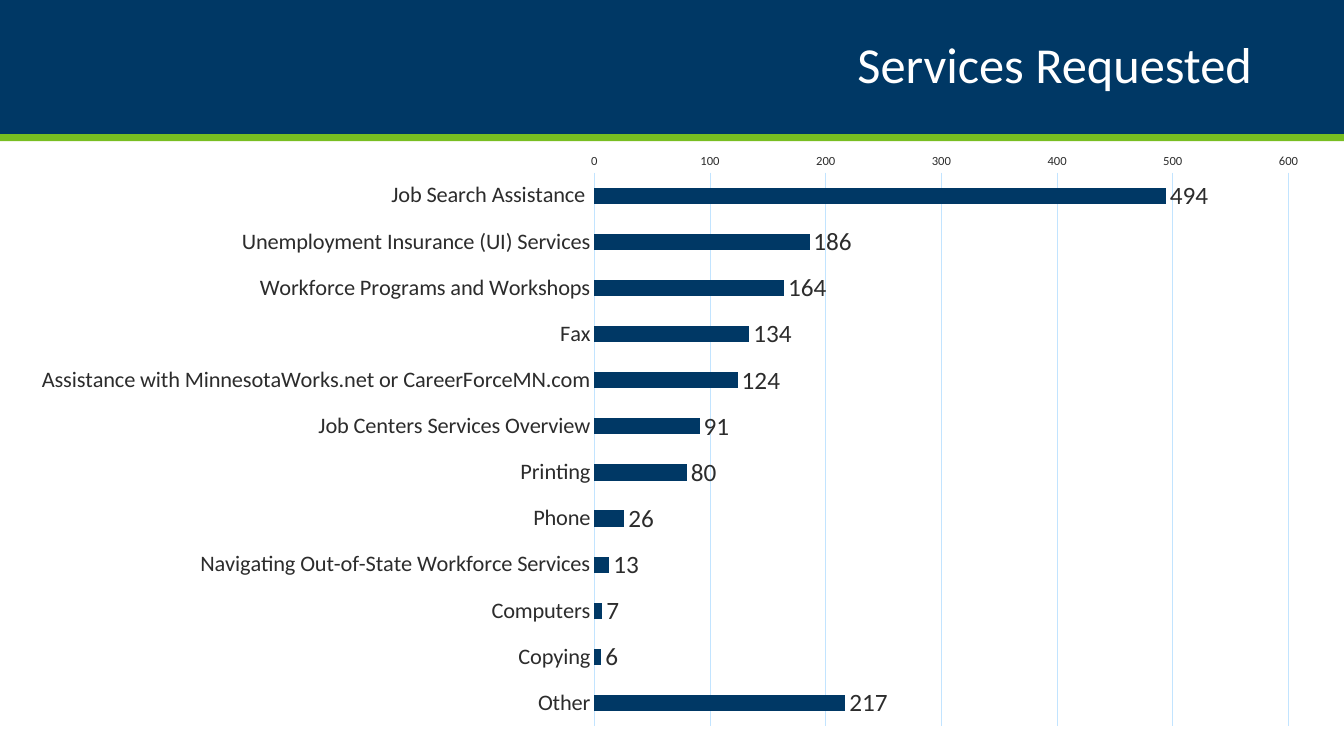
import pptx
import pptx.chart.data
import pptx.dml.color
import pptx.enum.chart
import pptx.enum.shapes
import pptx.enum.text
import pptx.oxml
import pptx.oxml.ns
import pptx.util

WIDTH, HEIGHT = 13.33, 7.5
NAVY, GREEN, WHITE, INK, PALE_BLUE = "003865", "78BE21", "FFFFFF", "2C2C2C", "C2E4FF"
FONT = "Calibri"
BANNER_HEIGHT, STRIPE_HEIGHT = 1.33, 0.07

REQUESTS = {
    "Job Search Assistance ": 494,
    "Unemployment Insurance (UI) Services": 186,
    "Workforce Programs and Workshops": 164,
    "Fax": 134,
    "Assistance with MinnesotaWorks.net or CareerForceMN.com": 124,
    "Job Centers Services Overview": 91,
    "Printing": 80,
    "Phone": 26,
    "Navigating Out-of-State Workforce Services": 13,
    "Computers": 7,
    "Copying": 6,
    "Other": 217,
}
# Plot area as shares of the chart frame
PLOT_SHARES = {"x": 0.44, "y": 0.02, "w": 0.53, "h": 0.93}


def color(hex_value):
    return pptx.dml.color.RGBColor.from_string(hex_value)


def inches(*lengths):
    return [pptx.util.Inches(length) for length in lengths]


def style_font(font, size, hex_value):
    font.name = FONT
    font.size = pptx.util.Pt(size)
    font.color.rgb = color(hex_value)


def style_line(line, hex_value):
    line.color.rgb = color(hex_value)
    line.width = pptx.util.Pt(0.75)


def add_band(slide, top, height, hex_value):
    """Add a full-width filled strip."""
    band = slide.shapes.add_shape(
        pptx.enum.shapes.MSO_SHAPE.RECTANGLE, *inches(0, top, WIDTH, height))
    band.shadow.inherit = False
    band.fill.solid()
    band.fill.fore_color.rgb = color(hex_value)
    band.line.fill.background()


def add_title(slide, wording):
    frame = slide.shapes.add_textbox(*inches(0.92, 0, 11.5, BANNER_HEIGHT)).text_frame
    frame.word_wrap = True
    frame.vertical_anchor = pptx.enum.text.MSO_ANCHOR.MIDDLE
    frame.margin_left = frame.margin_right = 0
    frame.margin_top = frame.margin_bottom = pptx.util.Inches(0.2)
    heading = frame.paragraphs[0]
    heading.alignment = pptx.enum.text.PP_ALIGN.RIGHT
    heading.line_spacing = 0.9
    run = heading.add_run()
    run.text = wording
    style_font(run.font, 36, WHITE)


def fix_plot_area(chart):
    """Pin the inner plot area to PLOT_SHARES."""
    plot_area = chart._chartSpace.chart.plotArea
    for automatic in plot_area.findall(pptx.oxml.ns.qn("c:layout")):
        plot_area.remove(automatic)
    modes = "".join(f'<c:{axis}Mode val="edge"/>' for axis in "xy")
    shares = "".join(f'<c:{key} val="{share}"/>' for key, share in PLOT_SHARES.items())
    plot_area.insert(0, pptx.oxml.parse_xml(
        f'<c:layout {pptx.oxml.ns.nsdecls("c")}><c:manualLayout>'
        f'<c:layoutTarget val="inner"/>{modes}{shares}</c:manualLayout></c:layout>'))


def style_axes(chart):
    no_ticks = pptx.enum.chart.XL_TICK_MARK.NONE
    services, counts = chart.category_axis, chart.value_axis
    for axis, size in ((services, 16), (counts, 9)):
        axis.major_tick_mark = axis.minor_tick_mark = no_ticks
        style_font(axis.tick_labels.font, size, INK)
    services.reverse_order = True
    services.crosses = pptx.enum.chart.XL_AXIS_CROSSES.MAXIMUM
    services.has_major_gridlines = False
    style_line(services.format.line, PALE_BLUE)
    counts.minimum_scale, counts.maximum_scale, counts.major_unit = 0, 600, 100
    counts.has_major_gridlines = True
    style_line(counts.major_gridlines.format.line, PALE_BLUE)
    counts.format.line.fill.background()


def add_requests_chart(slide):
    requests = pptx.chart.data.CategoryChartData()
    requests.categories = REQUESTS.keys()
    requests.add_series("Series 1", REQUESTS.values())
    chart = slide.shapes.add_chart(
        pptx.enum.chart.XL_CHART_TYPE.BAR_CLUSTERED,
        *inches(0.18, 1.53, 12.99, 5.97), requests).chart
    chart.has_title = chart.has_legend = False
    style_font(chart.font, 10, NAVY)
    style_axes(chart)
    fix_plot_area(chart)

    bars = chart.plots[0]
    bars.gap_width = 182
    bars.vary_by_categories = False
    fill = bars.series[0].format.fill
    fill.solid()
    fill.fore_color.rgb = color(NAVY)
    labels = bars.series[0].data_labels
    labels.show_value = True
    labels.position = pptx.enum.chart.XL_LABEL_POSITION.OUTSIDE_END
    style_font(labels.font, 18, INK)


def main():
    deck = pptx.Presentation()
    deck.slide_width, deck.slide_height = inches(WIDTH, HEIGHT)
    slide = deck.slides.add_slide(deck.slide_layouts[6])
    add_band(slide, 0, BANNER_HEIGHT, NAVY)
    add_band(slide, BANNER_HEIGHT, STRIPE_HEIGHT, GREEN)
    add_title(slide, "Services Requested")
    add_requests_chart(slide)
    deck.save("out.pptx")


if __name__ == "__main__":
    main()
